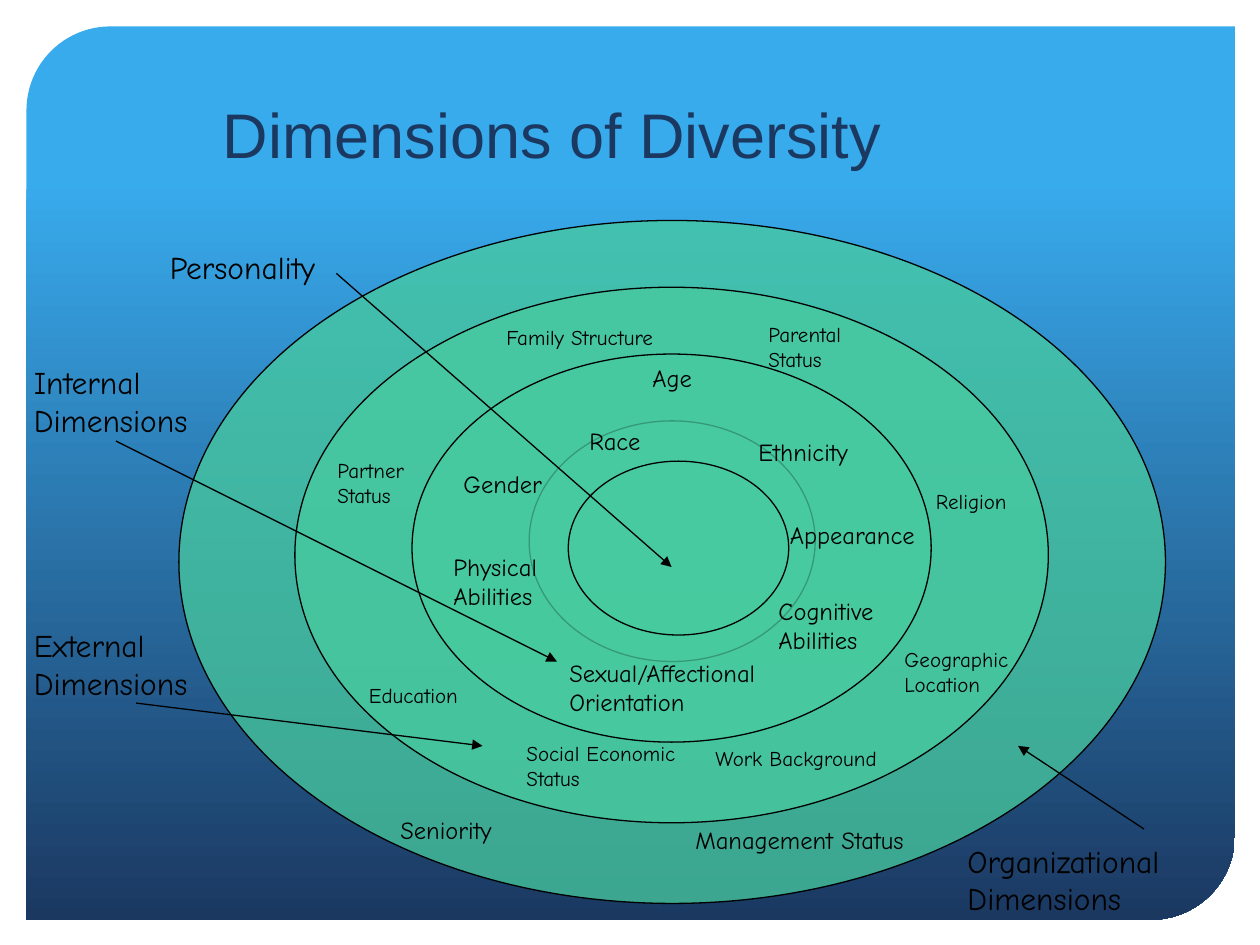
"""Build the Dimensions of Diversity slide with nested ellipses and labels."""
import pptx
import pptx.dml.color
import pptx.enum.shapes
import pptx.enum.text
import pptx.oxml
import pptx.oxml.ns
import pptx.util

Inches = pptx.util.Inches
SHAPES = pptx.enum.shapes.MSO_SHAPE
ANCHOR = pptx.enum.text.MSO_ANCHOR
AUTO_SIZE = pptx.enum.text.MSO_AUTO_SIZE


def colour(hex_value):
    return pptx.dml.color.RGBColor.from_string(hex_value)


def apply(target, values):
    for name, value in values.items():
        setattr(target, name, value)


def add_xml(parent, tag, **attributes):
    child = pptx.oxml.parse_xml(f"<a:{tag} {pptx.oxml.ns.nsdecls('a')}/>")
    for name, value in attributes.items():
        child.set(name, value)
    parent.append(child)


class DiversitySlide:
    navy, sky, green, black = "1B3861", "38ABED", "48CB9F", "000000"
    heading_font, label_font = "Arial", "Comic Neue"
    line_width = pptx.util.Pt(0.75)

    def __init__(self, slide):
        self.shapes = slide.shapes

    def outline(self, line):
        line.color.rgb = colour(self.black)
        line.width = self.line_width

    def panel(self, left, top, width, height):
        panel = self.shapes.add_shape(
            SHAPES.ROUND_2_DIAG_RECTANGLE, *map(Inches, (left, top, width, height)))
        panel.shadow.inherit = False
        panel.adjustments[0], panel.adjustments[1] = 0.094, 0
        panel.line.fill.background()
        panel.fill.gradient()
        panel.fill.gradient_angle = 270
        for stop, position, shade in zip(
                panel.fill.gradient_stops, (0.17, 1), (self.sky, self.navy)):
            apply(stop, {"position": position})
            stop.color.rgb = colour(shade)

    def rings(self, boxes):
        group = self.shapes.add_group_shape()
        for box in boxes:
            ring = group.shapes.add_shape(SHAPES.OVAL, *map(Inches, box))
            ring.shadow.inherit = False
            ring.fill.solid()
            ring.fill.fore_color.rgb = colour(self.green)
            fill_colour = ring.fill._xPr.find(".//" + pptx.oxml.ns.qn("a:srgbClr"))
            add_xml(fill_colour, "alpha", val="75000")
            self.outline(ring.line)

    def text(self, words, box, size, font, shade, frame_format):
        frame = self.shapes.add_textbox(*map(Inches, box)).text_frame
        apply(frame, {"word_wrap": True, **frame_format})
        paragraph = frame.paragraphs[0]
        run = paragraph.add_run()
        run.text = words
        apply(run.font, {"size": pptx.util.Pt(size), "name": font})
        run.font.color.rgb = colour(shade)

    def title(self, words, *box):
        self.text(words, box, 36, self.heading_font, self.navy,
                  {"vertical_anchor": ANCHOR.BOTTOM, "auto_size": AUTO_SIZE.NONE})

    def label(self, words, size, *box):
        self.text(words, box, size, self.label_font, self.black,
                  {"auto_size": AUTO_SIZE.SHAPE_TO_FIT_TEXT})

    def arrow(self, *ends):
        arrow = self.shapes.add_connector(
            pptx.enum.shapes.MSO_CONNECTOR.STRAIGHT, *map(Inches, ends))
        self.outline(arrow.line)
        add_xml(arrow.line._get_or_add_ln(), "tailEnd", type="triangle")
        add_xml(arrow._element.spPr, "effectLst")


RINGS = [
    (1.42, 1.75, 7.83, 5.42),
    (2.34, 2.28, 5.98, 4.25),
    (4.2, 3.34, 2.27, 1.91),
    (3.27, 2.81, 4.12, 3.08),
    (4.51, 3.66, 1.75, 1.38),
]
ARROWS = [
    (2.67, 2.17, 5.33, 4.5),
    (0.92, 3.5, 4.42, 5.25),
    (1.08, 5.58, 3.83, 5.92),
    (9.08, 6.58, 8.08, 5.92),
]
LABELS = {
    18: [
        ("Personality", 1.25, 1.92, 1.83, 0.4),
        ("Internal Dimensions", 0.17, 2.83, 2, 0.7),
        ("External Dimensions", 0.17, 4.92, 1.5, 0.7),
        ("Organizational Dimensions", 7.58, 6.63, 2.08, 0.7),
    ],
    14: [
        ("Age", 5.08, 2.83, 1, 0.33),
        ("Race", 4.58, 3.33, 0.83, 0.33),
        ("Gender", 3.58, 3.67, 1.25, 0.33),
        ("Sexual/Affectional Orientation", 4.42, 5.17, 2.08, 0.57),
        ("Physical Abilities", 3.5, 4.33, 1.25, 0.57),
        ("Ethnicity", 5.92, 3.42, 1.25, 0.33),
        ("Appearance", 6.17, 4.08, 1.33, 0.33),
        ("Cognitive Abilities", 6.08, 4.68, 1.25, 0.57),
        ("Seniority", 3.08, 6.42, 2.5, 0.33),
        ("Management Status", 5.42, 6.5, 2, 0.57),
    ],
    12: [
        ("Social Economic Status", 4.08, 5.83, 1.58, 0.5),
        ("Family Structure", 3.92, 2.53, 1.67, 0.3),
        ("Geographic Location", 7.08, 5.08, 1.42, 0.5),
        ("Education", 2.83, 5.37, 1.33, 0.3),
        ("Work Background", 5.58, 5.87, 1.67, 0.3),
        ("Parental Status", 6, 2.5, 1.25, 0.5),
        ("Partner Status", 2.58, 3.58, 0.83, 0.5),
        ("Religion", 7.33, 3.83, 1, 0.3),
    ],
}


def main():
    deck = pptx.Presentation()
    apply(deck, {"slide_width": Inches(10), "slide_height": Inches(7.5)})
    diversity = DiversitySlide(deck.slides.add_slide(deck.slide_layouts[6]))
    diversity.panel(0.21, 0.21, 9.59, 7.09)
    diversity.title("Dimensions of Diversity", 1.67, 0.33, 7.51, 1.08)
    diversity.rings(RINGS)
    for ends in ARROWS:
        diversity.arrow(*ends)
    for size, labels in LABELS.items():
        for words, *box in labels:
            diversity.label(words, size, *box)
    deck.save("out.pptx")


if __name__ == "__main__":
    main()
